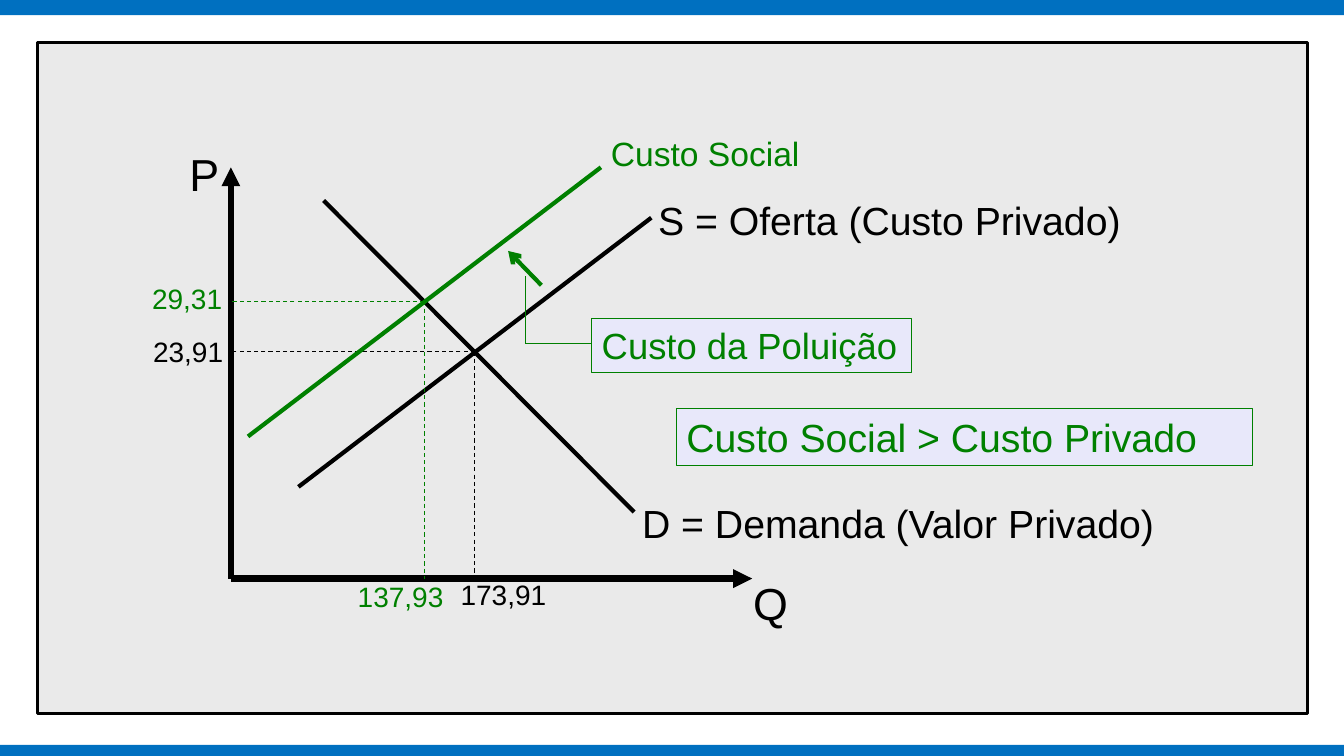
from lxml import etree
from pptx import Presentation
from pptx import util as u
from pptx.dml.color import RGBColor
from pptx.enum import dml, shapes, text
from pptx.oxml.ns import qn

PX = 9144  # one px is a hundredth of an inch
INK = {"black": "000000", "green": "008000", "blue": "0070C0",
       "panel": "EAEAEA", "lilac": "E8E8FA"}

# Axes, curves and the two market balances
ORIGIN = (229, 574)
TOP, RIGHT = (229, 166), (746, 574)
DEMAND = ((321, 199), (629, 508))
SUPPLY = ((296, 483), (646, 216))
SOCIAL = ((246, 433), (596, 166))
PRIVATE_EQ = (471, 349)
SOCIAL_EQ = (421, 299)


def tint(name):
    return RGBColor.from_string(INK[name])


def line(slide, start, end, color="black", width=3, dash=False, head=None):
    ends = [u.Emu(n * PX) for n in (*start, *end)]
    rule = slide.shapes.add_connector(shapes.MSO_CONNECTOR.STRAIGHT, *ends)
    rule.line.color.rgb = tint(color)
    rule.line.width = u.Pt(width)
    if dash:
        rule.line.dash_style = dml.MSO_LINE.DASH
    if head:
        tip = etree.SubElement(rule.line._get_or_add_ln(), qn("a:tailEnd"))
        tip.set("type", head)
    etree.SubElement(rule._element.spPr, qn("a:effectLst"))


def box(slide, area, fill, edge=None, width=0.75):
    rect = slide.shapes.add_shape(shapes.MSO_SHAPE.RECTANGLE,
                                  *[u.Emu(n * PX) for n in area])
    rect.shadow.inherit = False
    rect.fill.solid()
    rect.fill.fore_color.rgb = tint(fill)
    if edge:
        rect.line.color.rgb = tint(edge)
        rect.line.width = u.Pt(width)
    else:
        rect.line.fill.background()
    return rect


def write(shape, words, size=28, color="black"):
    frame = shape.text_frame
    frame.word_wrap = True
    frame.vertical_anchor = text.MSO_ANCHOR.TOP
    para = frame.paragraphs[0]
    para.alignment = text.PP_ALIGN.LEFT
    run = para.add_run()
    run.text = words
    run.font.name = "Arial"
    run.font.size = u.Pt(size)
    run.font.color.rgb = tint(color)


def label(slide, area, words, **style):
    note = slide.shapes.add_textbox(*[u.Emu(n * PX) for n in area])
    write(note, words, **style)


def guides(slide, point, color):
    """Dashed lines from a balance point to both axes."""
    for end in ((point[0], ORIGIN[1]), (ORIGIN[0], point[1])):
        line(slide, point, end, color, 0.75, dash=True)


def main():
    deck = Presentation()
    deck.slide_width, deck.slide_height = u.Emu(1333 * PX), u.Emu(750 * PX)
    slide = deck.slides.add_slide(deck.slide_layouts[6])

    # Bands and panel
    box(slide, (0, -3, 1333, 18), "blue")
    box(slide, (0, 739, 1333, 13), "blue")
    box(slide, (37, 42, 1260, 666), "panel", "black", 2.25)

    # Axes
    for end in (TOP, RIGHT):
        line(slide, ORIGIN, end, width=4.5, head="triangle")
    label(slide, (178, 141, 58, 64), "P", size=32)
    label(slide, (737, 566, 58, 64), "Q", size=32)

    # Private market
    line(slide, *DEMAND)
    line(slide, *SUPPLY)
    guides(slide, PRIVATE_EQ, "black")
    label(slide, (643, 190, 512, 57), "S = Oferta (Custo Privado)")
    label(slide, (627, 490, 565, 57), "D = Demanda (Valor Privado)")
    label(slide, (447, 568, 167, 44), "173,91", size=20)
    label(slide, (142, 327, 184, 44), "23,91", size=20)

    # Social cost
    line(slide, *SOCIAL, color="green")
    label(slide, (596, 127, 308, 51), "Custo Social", size=24, color="green")
    guides(slide, SOCIAL_EQ, "green")
    label(slide, (345, 570, 150, 44), "137,93", size=20, color="green")
    label(slide, (141, 274, 150, 44), "29,31", size=20, color="green")

    # Pollution cost: shift arrow and its callout
    line(slide, (537, 283), (504, 249), "green", head="arrow")
    bend = (521, 341)
    for end in ((521, 274), (587, 341)):
        line(slide, end, bend, "green", 0.75)
    for area, words, size in (
            ((587, 316, 317, 54), "Custo da Poluição", 26),
            ((671, 405, 571, 57), "Custo Social > Custo Privado", 28)):
        write(box(slide, area, "lilac", "green"), words,
              size=size, color="green")

    deck.save("out.pptx")


if __name__ == "__main__":
    main()
